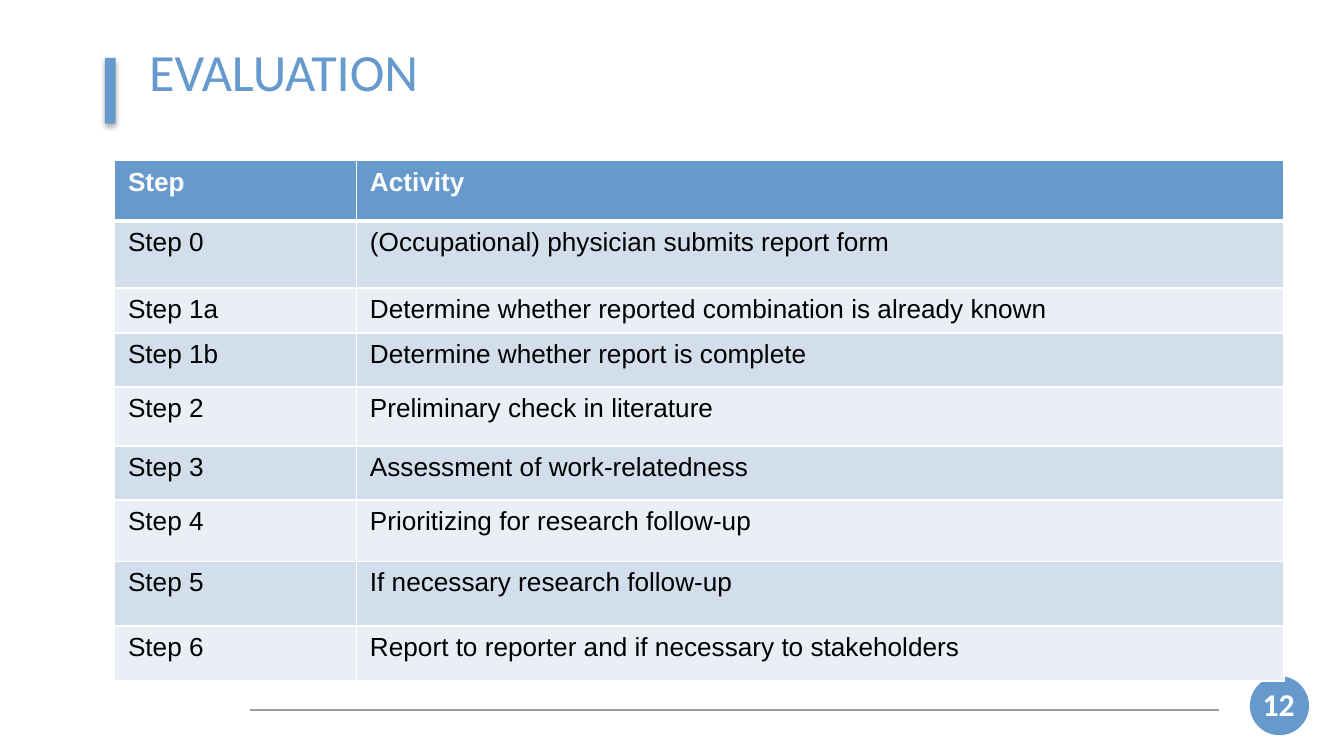
from dataclasses import dataclass

from pptx import Presentation
from pptx.dml.color import RGBColor
from pptx.enum.shapes import MSO_CONNECTOR, MSO_SHAPE
from pptx.enum.text import MSO_ANCHOR, PP_ALIGN
from pptx.oxml import parse_xml
from pptx.oxml.ns import nsdecls
from pptx.util import Pt


@dataclass(frozen=True)
class Theme:
    accent: str = "6699CC"
    white: str = "FFFFFF"
    text: str = "000000"
    rule: str = "9D9D9C"
    bands: tuple = ("D3DEEC", "EAEFF6")
    title_font: str = "Calibri"
    body_font: str = "Arial"
    title_size: int = 28
    number_size: int = 17
    table_size: int = 14


THEME = Theme()

COLUMN_WIDTHS = (129.6, 496.8)
# Row height, step, activity
ROWS = (
    (32.4, "Step", "Activity"),
    (36, "Step 0", "(Occupational) physician submits report form"),
    (22.8, "Step 1a", "Determine whether reported combination is already known"),
    (28.8, "Step 1b", "Determine whether report is complete"),
    (31.7, "Step 2", "Preliminary check in literature"),
    (28.8, "Step 3", "Assessment of work-relatedness"),
    (33.1, "Step 4", "Prioritizing for research follow-up"),
    (34.6, "Step 5", "If necessary research follow-up"),
    (29.5, "Step 6", "Report to reporter and if necessary to stakeholders"),
)


def style(p, font, size, color, bold=False):
    p.font.name = font
    p.font.size = Pt(size)
    p.font.bold = bold
    p.font.color.rgb = RGBColor.from_string(color)


def add_solid(s, preset, left, top, width, height):
    sp = s.shapes.add_shape(preset, Pt(left), Pt(top), Pt(width), Pt(height))
    sp.shadow.inherit = False
    sp.fill.solid()
    sp.fill.fore_color.rgb = RGBColor.from_string(THEME.accent)
    sp.line.fill.background()
    return sp


def add_drop_shadow(sp):
    effects = sp.element.spPr.find("{*}effectLst")
    effects.append(parse_xml(
        f'<a:outerShdw {nsdecls("a")} blurRad="{Pt(3.1)}" dist="{Pt(1.8)}" '
        'dir="5400000" rotWithShape="0"><a:srgbClr val="000000">'
        '<a:alpha val="35000"/></a:srgbClr></a:outerShdw>'))


def add_rule(s, left, right, y):
    line = s.shapes.add_connector(
        MSO_CONNECTOR.STRAIGHT, Pt(left), Pt(y), Pt(right), Pt(y))
    line.line.color.rgb = RGBColor.from_string(THEME.rule)
    line.line.width = Pt(1)
    line.element.spPr.append(parse_xml(f'<a:effectLst {nsdecls("a")}/>'))


def add_label(s, text, left, top, width, height, inset_y, size, color,
              bold=False, align=PP_ALIGN.LEFT):
    box = s.shapes.add_textbox(Pt(left), Pt(top), Pt(width), Pt(height))
    tf = box.text_frame
    tf.word_wrap = True
    tf.vertical_anchor = MSO_ANCHOR.MIDDLE
    tf.margin_left = tf.margin_right = Pt(7.9)
    tf.margin_top = tf.margin_bottom = Pt(inset_y)
    p = tf.paragraphs[0]
    p.text = text
    p.alignment = align
    style(p, THEME.title_font, size, color, bold)


def set_borders(cell, top, bottom):
    tc_pr = cell._tc.get_or_add_tcPr()
    for side, width in (("L", 1), ("R", 1), ("T", top), ("B", bottom)):
        tc_pr.append(parse_xml(
            f'<a:ln{side} {nsdecls("a")} w="{Pt(width)}"><a:solidFill>'
            f'<a:srgbClr val="{THEME.white}"/></a:solidFill></a:ln{side}>'))


def add_steps_table(s, left, top):
    heights = [row[0] for row in ROWS]
    table = s.shapes.add_table(
        len(ROWS), len(COLUMN_WIDTHS), Pt(left), Pt(top),
        Pt(sum(COLUMN_WIDTHS)), Pt(sum(heights))).table
    for column, width in zip(table.columns, COLUMN_WIDTHS):
        column.width = Pt(width)
    for i, (height, *texts) in enumerate(ROWS):
        table.rows[i].height = Pt(height)
        header = i == 0
        fill = THEME.accent if header else THEME.bands[(i - 1) % 2]
        color = THEME.white if header else THEME.text
        for j, text in enumerate(texts):
            cell = table.cell(i, j)
            # A thick rule separates the header from the first step
            set_borders(cell, 3 if i == 1 else 1, 3 if header else 1)
            cell.fill.solid()
            cell.fill.fore_color.rgb = RGBColor.from_string(fill)
            p = cell.text_frame.paragraphs[0]
            p.text = text
            style(p, THEME.body_font, THEME.table_size, color, header)


def main():
    prs = Presentation()
    prs.slide_width, prs.slide_height = Pt(720), Pt(405)
    s = prs.slides.add_slide(prs.slide_layouts[6])

    # Footer: page number badge and rule
    add_solid(s, MSO_SHAPE.OVAL, 669.6, 362.2, 31.7, 31.7)
    add_rule(s, 133.9, 653, 380.2)
    add_label(s, "12", 666.7, 366.5, 36.7, 21.6, 4.3, THEME.number_size,
              THEME.white, bold=True, align=PP_ALIGN.CENTER)

    # Title with accent bar
    add_drop_shadow(add_solid(s, MSO_SHAPE.RECTANGLE, 56.2, 31, 5.8, 35.3))
    add_label(s, "EVALUATION", 72, 21.6, 627, 32.4, 1.4, THEME.title_size,
              THEME.accent)

    # Evaluation steps
    add_steps_table(s, 61.4, 86)

    prs.save("out.pptx")


if __name__ == "__main__":
    main()
